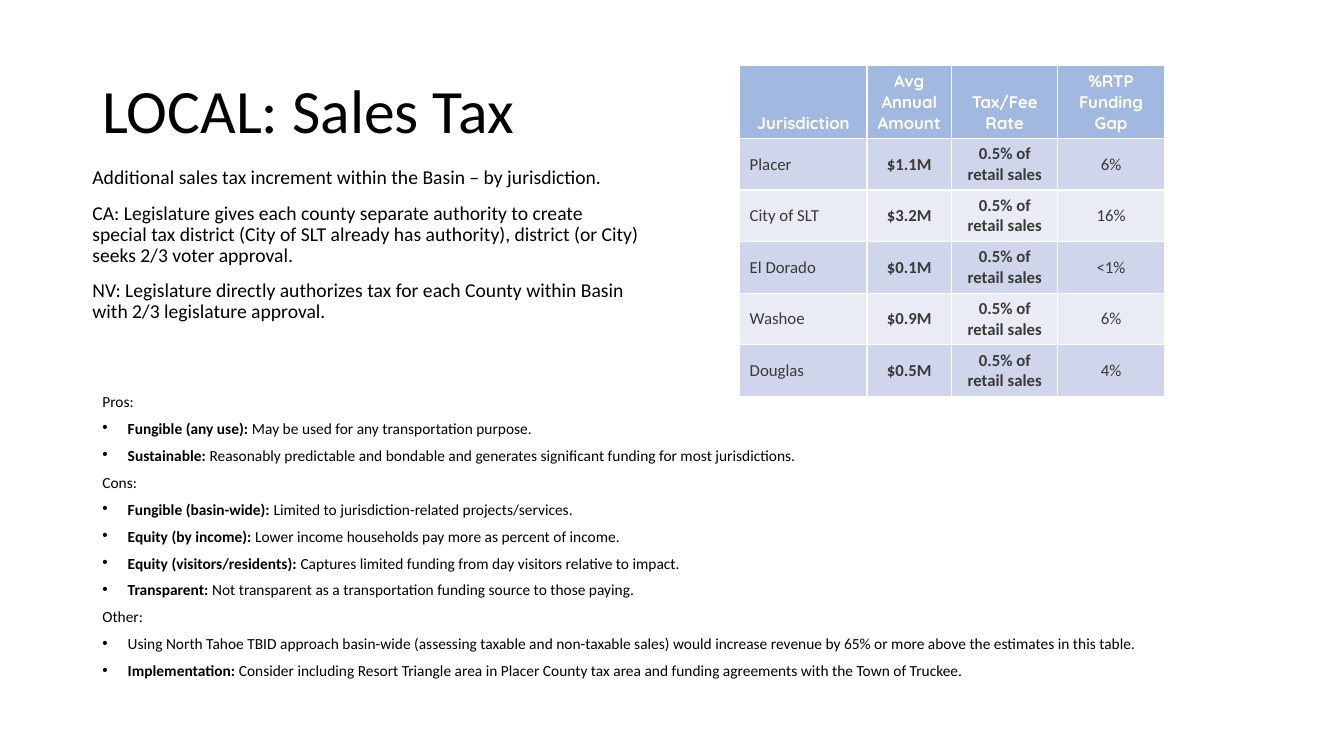
from dataclasses import dataclass

from lxml.etree import SubElement
from pptx import Presentation
from pptx.dml.color import RGBColor
from pptx.enum.text import MSO_ANCHOR, PP_ALIGN
from pptx.oxml.ns import qn
from pptx.util import Cm, Pt


@dataclass(frozen=True)
class Theme:
    font: str = "Calibri"
    accent: str = "Quicksand"
    black: str = "000000"
    white: str = "FFFFFF"
    grey: str = "3B3838"
    blue: str = "4472C4"
    bands: tuple = ("CFD5EA", "E9EBF5")
    title: int = 44
    lead: int = 14
    cell: int = 12
    note: int = 11


THEME = Theme()

LEAD = [
    "Additional sales tax increment within the Basin – by jurisdiction.",
    "CA: Legislature gives each county separate authority to create special tax district "
    "(City of SLT already has authority), district (or City) seeks 2/3 voter approval.",
    "NV: Legislature directly authorizes tax for each County within Basin "
    "with 2/3 legislature approval.",
]

HEADS = ["Jurisdiction", "Avg Annual Amount", "Tax/Fee Rate", "%RTP Funding Gap"]
RATE = "0.5% of retail sales"
AREAS = [
    ("Placer", "$1.1M", "6%"),
    ("City of SLT", "$3.2M", "16%"),
    ("El Dorado", "$0.1M", "<1%"),
    ("Washoe", "$0.9M", "6%"),
    ("Douglas", "$0.5M", "4%"),
]

NOTES = {
    "Pros:": [
        ("Fungible (any use): ", "May be used for any transportation purpose."),
        ("Sustainable: ", "Reasonably predictable and bondable and generates "
         "significant funding for most jurisdictions."),
    ],
    "Cons:": [
        ("Fungible (basin-wide): ", "Limited to jurisdiction-related projects/services."),
        ("Equity (by income): ", "Lower income households pay more as percent of income."),
        ("Equity (visitors/residents): ",
         "Captures limited funding from day visitors relative to impact."),
        ("Transparent: ",
         "Not transparent as a transportation funding source to those paying."),
    ],
    "Other:": [
        ("", "Using North Tahoe TBID approach basin-wide (assessing taxable and non-taxable "
         "sales) would increase revenue by 65% or more above the estimates in this table."),
        ("Implementation: ", "Consider including Resort Triangle area in Placer County "
         "tax area and funding agreements with the Town of Truckee."),
    ],
}


def style(run, size, color, bold=False, name=THEME.font):
    font = run.font
    font.name = name
    font.size = Pt(size)
    font.bold = bold
    font.color.rgb = RGBColor.from_string(color)


def add_box(slide, left, top, width, height, anchor=MSO_ANCHOR.TOP):
    box = slide.shapes.add_textbox(Cm(left), Cm(top), Cm(width), Cm(height))
    frame = box.text_frame
    frame.word_wrap = True
    frame.vertical_anchor = anchor
    return frame


def set_space(para, line, before=10):
    para.line_spacing = line
    para.space_before = Pt(before)


def add_bullet(para):
    props = para._p.get_or_add_pPr()
    props.set("marL", str(Cm(0.64)))
    props.set("indent", str(-Cm(0.64)))
    SubElement(props, qn("a:buFont"), typeface="Arial")
    SubElement(props, qn("a:buChar"), char="•")


def add_title(slide, text):
    frame = add_box(slide, 2.33, 1.01, 29.21, 3.68, MSO_ANCHOR.MIDDLE)
    frame.text = text
    para = frame.paragraphs[0]
    set_space(para, 0.9, 0)
    style(para.runs[0], THEME.title, THEME.black)


def add_lead(slide, lines):
    frame = add_box(slide, 2.08, 4.11, 14.33, 5.79)
    frame.text = "\n".join(lines)
    for para in frame.paragraphs:
        set_space(para, 0.9)
        style(para.runs[0], THEME.lead, THEME.black)


def add_notes(slide, groups):
    frame = add_box(slide, 2.33, 9.88, 27.56, 8.97)
    rows = []
    for head, items in groups.items():
        rows.append((head, None))
        rows.extend(items)
    frame.text = "\n".join(label for label, text in rows)
    for para, (label, text) in zip(frame.paragraphs, rows):
        set_space(para, 0.7)
        for run in para.runs:
            style(run, THEME.note, THEME.black, bold=text is not None)
        if text:
            add_bullet(para)
            run = para.add_run()
            run.text = text
            style(run, THEME.note, THEME.black)


def fill_cell(cell, text, back, align, anchor, **look):
    cell.text_frame.text = text
    cell.vertical_anchor = anchor
    cell.fill.solid()
    cell.fill.fore_color.rgb = RGBColor.from_string(back)
    para = cell.text_frame.paragraphs[0]
    para.alignment = align
    style(para.runs[0], THEME.cell, **look)


def fade(cell, share):
    color = cell._tc.tcPr.find(qn("a:solidFill"))[0]
    SubElement(color, qn("a:alpha"), val=str(share * 1000))


def add_rates(slide, heads, areas):
    widths = [3.21, 2.13, 2.68, 2.68]
    heights = [1.83] + [1.3] * len(areas)
    frame = slide.shapes.add_table(
        len(heights), len(widths), Cm(18.64), Cm(1.66),
        Cm(sum(widths)), Cm(sum(heights)))
    table = frame.table
    for column, width in zip(table.columns, widths):
        column.width = Cm(width)
    for row, height in zip(table.rows, heights):
        row.height = Cm(height)
    for col, head in enumerate(heads):
        cell = table.cell(0, col)
        fill_cell(cell, head, THEME.blue, PP_ALIGN.CENTER, MSO_ANCHOR.BOTTOM,
                  color=THEME.white, bold=True, name=THEME.accent)
        cell.margin_left = cell.margin_right = Cm(0.2)
        fade(cell, 50)
    for row, (area, amount, gap) in enumerate(areas, 1):
        band = THEME.bands[(row - 1) % 2]
        for col, text in enumerate((area, amount, RATE, gap)):
            align = PP_ALIGN.CENTER if col else PP_ALIGN.LEFT
            fill_cell(table.cell(row, col), text, band, align, MSO_ANCHOR.MIDDLE,
                      color=THEME.grey, bold=col in (1, 2))


def main():
    deck = Presentation()
    deck.slide_width = Cm(33.87)
    deck.slide_height = Cm(19.05)
    slide = deck.slides.add_slide(deck.slide_layouts[6])
    add_title(slide, "LOCAL: Sales Tax")
    add_lead(slide, LEAD)
    add_rates(slide, HEADS, AREAS)
    add_notes(slide, NOTES)
    deck.save("out.pptx")


if __name__ == "__main__":
    main()
